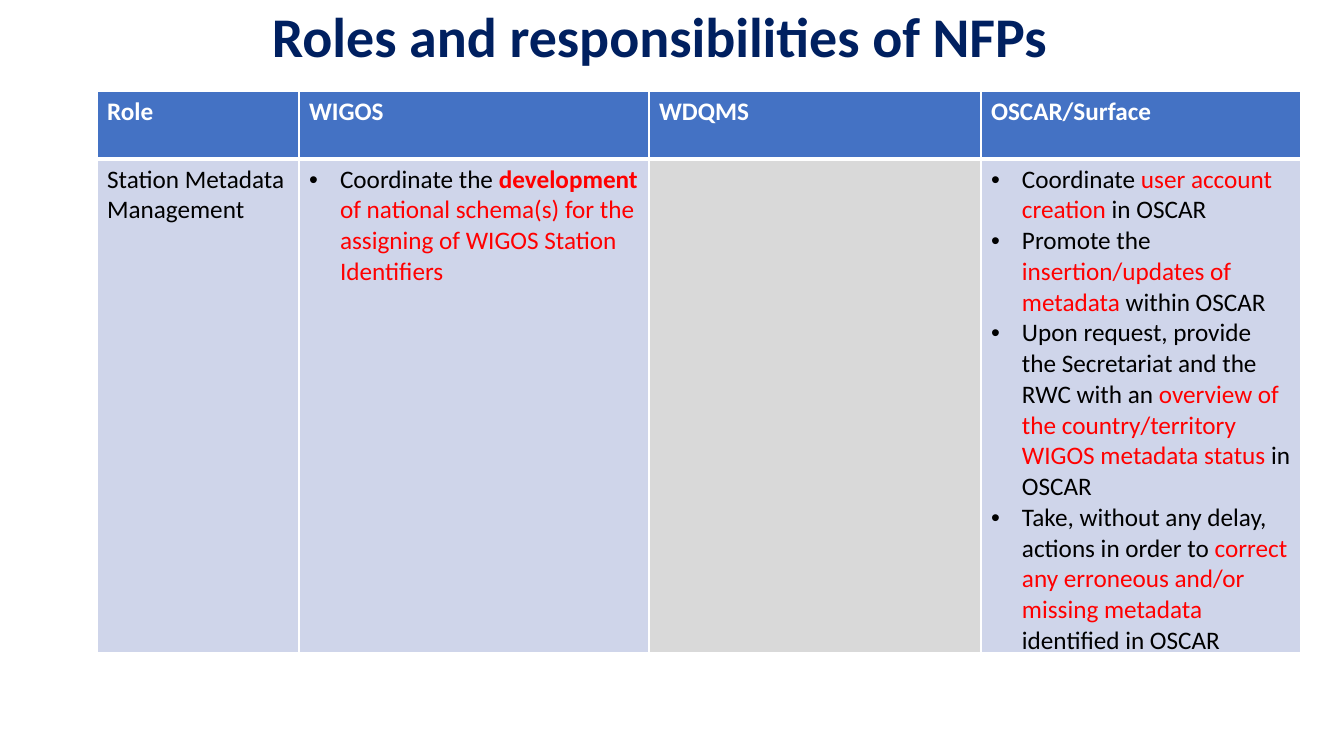
import pptx
import pptx.dml.color
import pptx.enum.text
import pptx.oxml
import pptx.oxml.ns
import pptx.util

PX = 914400 / 100.8
NAVY = pptx.dml.color.RGBColor(0x00, 0x20, 0x60)
BLUE = pptx.dml.color.RGBColor(0x44, 0x72, 0xC4)
PALE = pptx.dml.color.RGBColor(0xCF, 0xD5, 0xEA)
GREY = pptx.dml.color.RGBColor(0xD9, 0xD9, 0xD9)
WHITE = pptx.dml.color.RGBColor(0xFF, 0xFF, 0xFF)
BLACK = pptx.dml.color.RGBColor(0x00, 0x00, 0x00)
RED = pptx.dml.color.RGBColor(0xFF, 0x00, 0x00)


def px(length):
    return pptx.util.Emu(round(length * PX))


def add_span(para, text, size, color, bold=False):
    span = para.add_run()
    span.text = text
    settings = {"name": "Calibri", "size": pptx.util.Pt(size), "bold": bold}
    for name, value in settings.items():
        setattr(span.font, name, value)
    span.font.color.rgb = color


deck = pptx.Presentation()
deck.slide_width, deck.slide_height = px(1344), px(756)
page = deck.slides.add_slide(deck.slide_layouts[5])

title = page.shapes.title
title_place = {"left": 80, "top": 22, "width": 1159, "height": 50}
for name, value in title_place.items():
    setattr(title, name, px(value))
frame_format = {
    "margin_left": 0, "margin_top": 0, "margin_right": 0, "margin_bottom": 0,
    "word_wrap": True,
    "vertical_anchor": pptx.enum.text.MSO_ANCHOR.TOP,
    "auto_size": pptx.enum.text.MSO_AUTO_SIZE.SHAPE_TO_FIT_TEXT,
}
for name, value in frame_format.items():
    setattr(title.text_frame, name, value)
heading = title.text_frame.paragraphs[0]
heading.alignment = pptx.enum.text.PP_ALIGN.CENTER
heading.line_spacing = pptx.util.Pt(33.6)
add_span(heading, "Roles and responsibilities of NFPs", 40, NAVY, True)

column_widths = [202, 350, 332, 320]
row_heights = [68, 494]
table = page.shapes.add_table(
    len(row_heights), len(column_widths), px(97), px(91),
    px(sum(column_widths)), px(sum(row_heights))).table
for column, width in zip(table.columns, column_widths):
    column.width = px(width)
for row, height in zip(table.rows, row_heights):
    row.height = px(height)

headers = ["Role", "WIGOS", "WDQMS", "OSCAR/Surface"]
duties = [
    [[("Station Metadata Management", BLACK, False)]],
    [[("Coordinate the ", BLACK, False),
      ("development", RED, True),
      (" of national schema(s) for the assigning of WIGOS Station Identifiers", RED, False)]],
    [],
    [[("Coordinate ", BLACK, False),
      ("user account creation", RED, False),
      (" in OSCAR", BLACK, False)],
     [("Promote the ", BLACK, False),
      ("insertion/updates of metadata ", RED, False),
      ("within OSCAR", BLACK, False)],
     [("Upon request, provide the Secretariat and the RWC with an ", BLACK, False),
      ("overview of the country/territory WIGOS metadata status ", RED, False),
      ("in OSCAR", BLACK, False)],
     [("Take, without any delay, actions in order to ", BLACK, False),
      ("correct any erroneous and/or missing metadata", RED, False),
      (" identified in OSCAR", BLACK, False)]],
]
rows = [[[[(header, WHITE, True)]] for header in headers], duties]
fills = [[BLUE] * 4, [PALE, PALE, GREY, PALE]]
namespace = pptx.oxml.ns.nsdecls("a")

for row_index, row in enumerate(rows):
    for column_index, paragraphs in enumerate(row):
        cell = table.cell(row_index, column_index)
        cell.fill.solid()
        cell.fill.fore_color.rgb = fills[row_index][column_index]
        properties = cell._tc.get_or_add_tcPr()
        for position, side in enumerate(["lnL", "lnR", "lnT", "lnB"]):
            seam = (row_index, side) in [(0, "lnB"), (1, "lnT")]
            width = pptx.util.Pt(3 if seam else 1)
            properties.insert(position, pptx.oxml.parse_xml(
                f'<a:{side} {namespace} w="{width}"><a:solidFill>'
                f'<a:srgbClr val="{WHITE}"/></a:solidFill></a:{side}>'))
        for index, spans in enumerate(paragraphs):
            frame = cell.text_frame
            para = frame.add_paragraph() if index else frame.paragraphs[0]
            for text, color, bold in spans:
                add_span(para, text, 18, color, bold)
            if row_index and column_index:
                layout = para._p.get_or_add_pPr()
                layout.set("marL", str(px(31)))
                layout.set("indent", str(-px(31)))
                layout.append(pptx.oxml.parse_xml(f'<a:buFont {namespace} typeface="Arial"/>'))
                layout.append(pptx.oxml.parse_xml(f'<a:buChar {namespace} char="•"/>'))

deck.save("out.pptx")
